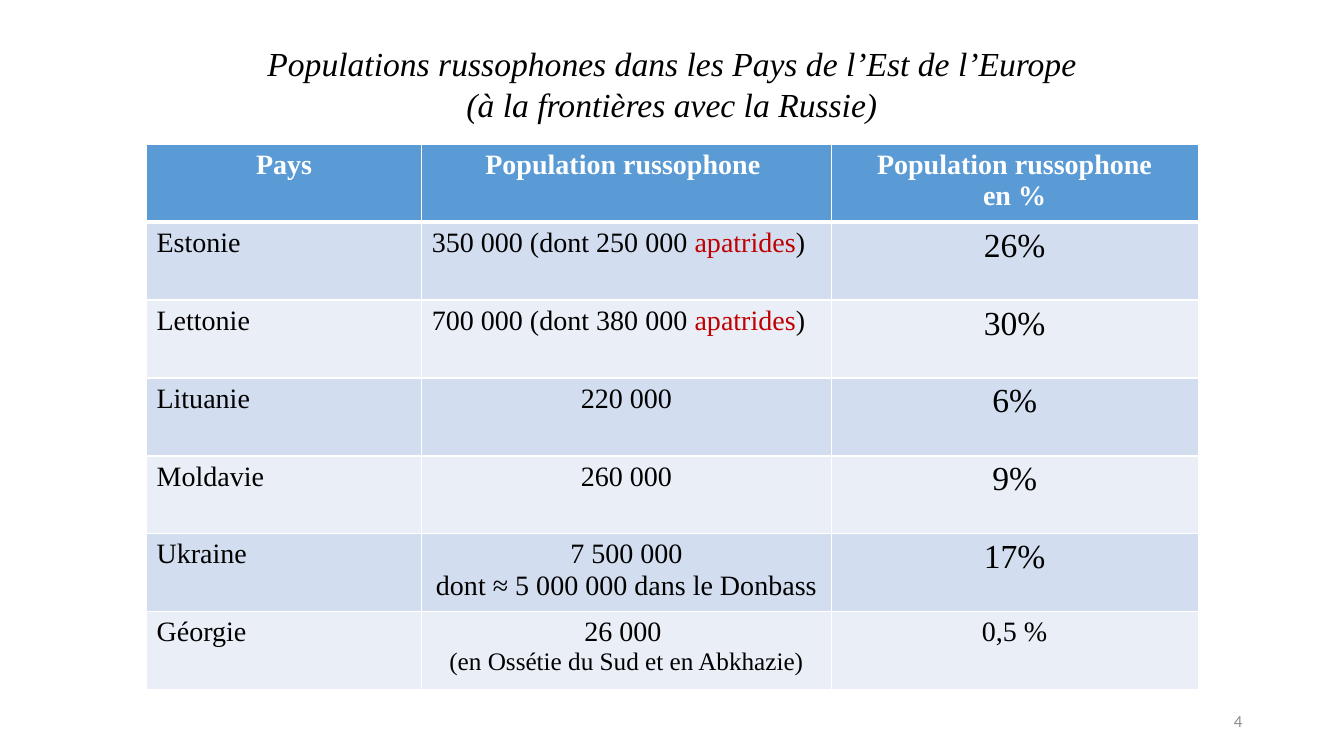
from dataclasses import dataclass

from pptx import Presentation, util as u
from pptx.dml.color import RGBColor
from pptx.enum import text as tx
from pptx.oxml import parse_xml
from pptx.oxml.ns import nsdecls

LEFT, MID, RIGHT = tx.PP_ALIGN.LEFT, tx.PP_ALIGN.CENTER, tx.PP_ALIGN.RIGHT


@dataclass(frozen=True)
class Theme:
    serif: str = "Times New Roman"
    sans: str = "Calibri"
    ink: str = "000000"
    white: str = "FFFFFF"
    gray: str = "8C8C8C"
    red: str = "C00000"
    head: str = "5B9BD5"
    bands: tuple = ("D2DEEF", "EAEFF7")
    large: int = 24
    base: int = 20
    small: int = 18
    tiny: int = 12


class Deck:
    """Draws on one slide; boxes are (left, top, width, height) in percent."""

    def __init__(self, prs, theme):
        self.prs, self.theme = prs, theme
        self.slide = prs.slides.add_slide(prs.slide_layouts[5])

    def across(self, share):
        return round(self.prs.slide_width * share / 100)

    def down(self, share):
        return round(self.prs.slide_height * share / 100)

    def place(self, box):
        x, y, w, h = box
        return self.across(x), self.down(y), self.across(w), self.down(h)

    def style(self, para, size, color, align, font=None, bold=False, italic=False):
        para.alignment = align
        for run in para.runs:
            face = run.font
            face.name, face.size = font or self.theme.serif, u.Pt(size)
            face.bold, face.italic = bold, italic
            face.color.rgb = RGBColor.from_string(color)

    def title(self, words, box):
        shape = self.slide.shapes.title
        shape.left, shape.top, shape.width, shape.height = self.place(box)
        frame = shape.text_frame
        frame.text = words
        frame.vertical_anchor = tx.MSO_ANCHOR.TOP
        frame.auto_size = tx.MSO_AUTO_SIZE.NONE
        for para in frame.paragraphs:
            self.style(para, self.theme.large, self.theme.ink, MID, italic=True)

    def number(self, words, box):
        frame = self.slide.shapes.add_textbox(*self.place(box)).text_frame
        frame.word_wrap = True
        frame.vertical_anchor = tx.MSO_ANCHOR.MIDDLE
        frame.text = words
        t = self.theme
        self.style(frame.paragraphs[0], t.tiny, t.gray, RIGHT, t.sans)

    def table(self, rows, cols, box):
        frame = self.slide.shapes.add_table(len(rows), len(cols), *self.place(box))
        grid = frame.table
        for col, share in zip(grid.columns, cols):
            col.width = self.across(share)
        for row in grid.rows:
            row.height = self.down(box[3] / len(rows))
        for r, row in enumerate(rows):
            for c, (words, size, align) in enumerate(row):
                self.cell(grid.cell(r, c), r, words, size, align)

    def cell(self, cell, row, words, size, align):
        t = self.theme
        top, low = (3 if row == 1 else 1), (3 if row == 0 else 1)
        for side, width in (("L", 1), ("R", 1), ("T", top), ("B", low)):
            self.border(cell, side, width)
        cell.fill.solid()
        fill = t.bands[(row - 1) % 2] if row else t.head
        cell.fill.fore_color.rgb = RGBColor.from_string(fill)
        cell.text_frame.text = words
        for para in cell.text_frame.paragraphs:
            # Side notes in brackets are set smaller.
            points = t.small if para.text.startswith("(") else size
            self.accent(para, "apatrides")
            self.style(para, points, t.ink if row else t.white, align, bold=row == 0)
            for run in para.runs:
                if run.text == "apatrides":
                    run.font.color.rgb = RGBColor.from_string(t.red)

    def accent(self, para, word):
        """Give the word a run of its own."""
        before, found, after = para.text.partition(word)
        if found:
            para.text = before
            for part in (found, after):
                para.add_run().text = part

    def border(self, cell, side, width):
        props = cell._tc.get_or_add_tcPr()
        props.append(parse_xml(
            f'<a:ln{side} {nsdecls("a")} w="{u.Pt(width)}"><a:solidFill>'
            f'<a:srgbClr val="{self.theme.white}"/></a:solidFill></a:ln{side}>'))


def main():
    prs = Presentation()
    prs.slide_width, prs.slide_height = u.Inches(13.33), u.Inches(7.5)
    t = Theme()
    deck = Deck(prs, t)

    heads = ("Pays", "Population russophone ", "Population russophone\n en % ")
    lands = (
        ("Estonie", "350 000 (dont 250 000 apatrides)", LEFT, "26%", t.large),
        ("Lettonie", "700 000 (dont 380 000 apatrides)", LEFT, "30%", t.large),
        ("Lituanie", "220 000", MID, "6%", t.large),
        ("Moldavie", "260 000", MID, "9%", t.large),
        ("Ukraine", "7 500 000\ndont ≈ 5 000 000 dans le Donbass", MID, "17%", t.large),
        ("Géorgie", "26 000 \n(en Ossétie du Sud et en Abkhazie)", MID, "0,5 %", t.base),
    )
    rows = [[(head, t.base, MID) for head in heads]]
    rows += [[(land, t.base, LEFT), (count, t.base, align), (share, size, MID)]
             for land, count, align, share, size in lands]

    deck.number("4", (70.67, 92.67, 22.5, 5.33))
    deck.table(rows, (20.48, 30.46, 27.31), (10.9, 19.07, 78.25, 72.2))
    deck.title("Populations russophones dans les Pays de l’Est de l’Europe\n"
               "(à la frontières avec la Russie)", (16.65, 5.07, 66.69, 16.13))
    prs.save("out.pptx")


if __name__ == "__main__":
    main()
